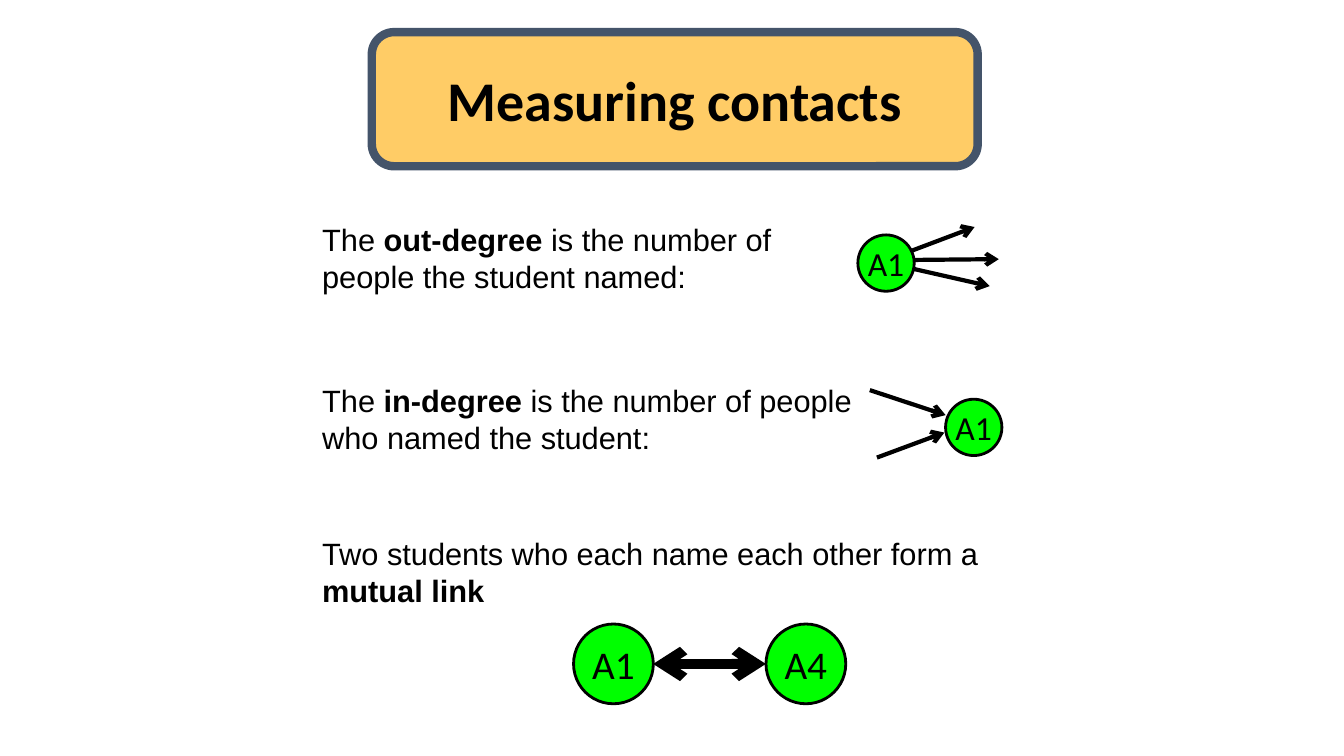
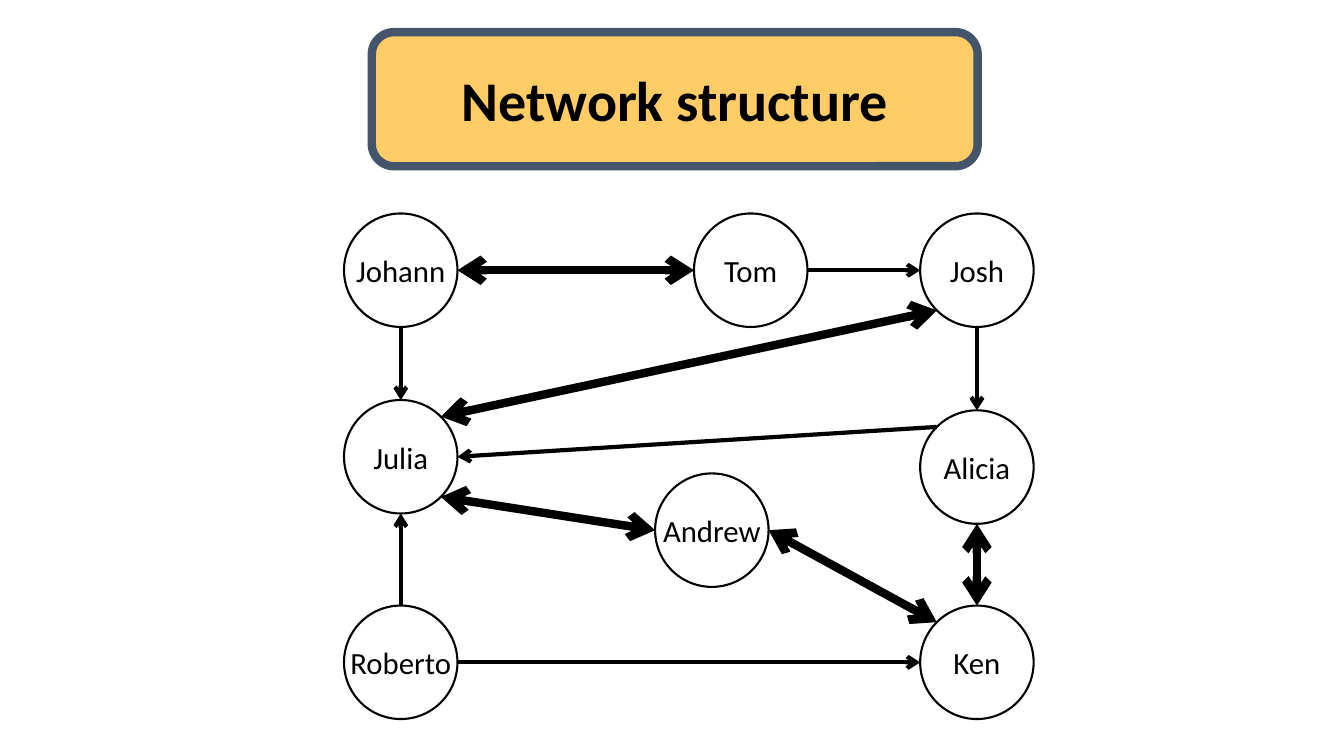
import math
from dataclasses import dataclass

from lxml import etree
from pptx import Presentation, util as u
from pptx.dml.color import RGBColor
from pptx.enum import shapes, text
from pptx.oxml.ns import qn


@dataclass(frozen=True)
class Theme:
    ink: RGBColor = RGBColor(0x00, 0x00, 0x00)
    paper: RGBColor = RGBColor(0xFF, 0xFF, 0xFF)
    banner: RGBColor = RGBColor(0xFF, 0xCC, 0x66)
    banner_edge: RGBColor = RGBColor(0x44, 0x54, 0x6A)
    student: RGBColor = RGBColor(0x00, 0xFF, 0x00)
    label_font: str = "Calibri"
    text_font: str = "Arial"
    title_size: int = 40
    pair_size: int = 28
    student_size: int = 24
    text_size: int = 22


theme = Theme()


def add_run(paragraph, words, size, font, bold=False):
    run = paragraph.add_run()
    run.text = words
    run.font.size = u.Pt(size)
    run.font.name = font
    run.font.bold = bold
    run.font.color.rgb = theme.ink


def add_arrow(slide, start, end, weight, mutual=False):
    arrow = slide.shapes.add_connector(
        shapes.MSO_CONNECTOR.STRAIGHT, *(u.Cm(length) for length in (*start, *end)))
    arrow.line.color.rgb = theme.ink
    arrow.line.width = u.Pt(weight)
    properties = arrow.element.spPr
    outline = properties.find(qn("a:ln"))
    for tip in ("a:headEnd", "a:tailEnd") if mutual else ("a:tailEnd",):
        etree.SubElement(outline, qn(tip), type="arrow")
    etree.SubElement(properties, qn("a:effectLst"))


prs = Presentation()
prs.slide_width, prs.slide_height = u.Cm(33.87), u.Cm(19.05)

# Slides with their title banners
titled = []
for heading in ("Measuring contacts", "Network structure"):
    slide = prs.slides.add_slide(prs.slide_layouts[5])
    place = [u.Cm(length) for length in (9.37, 0.81, 15.27, 3.38)]
    banner = slide.shapes.add_shape(shapes.MSO_SHAPE.ROUNDED_RECTANGLE, *place)
    banner.shadow.inherit = False
    banner.fill.solid()
    banner.fill.fore_color.rgb = theme.banner
    banner.line.color.rgb = theme.banner_edge
    banner.line.width = u.Pt(6)

    title = slide.shapes.title
    title.element.addprevious(banner.element)  # banner behind the title
    title.left, title.top, title.width, title.height = place
    frame = title.text_frame
    frame.auto_size = text.MSO_AUTO_SIZE.NONE
    frame.vertical_anchor = text.MSO_ANCHOR.MIDDLE
    frame.paragraphs[0].alignment = text.PP_ALIGN.CENTER
    add_run(frame.paragraphs[0], heading, theme.title_size, theme.label_font, True)
    titled.append(slide)
contacts, network = titled

# Definitions: top, width, runs (every second run is bold)
definitions = [
    (5.44, 13.74, ("The ", "out-degree", " is the number of people the student named:")),
    (9.5, 15.06, ("The ", "in-degree ", "is the number of people who named the student:")),
    (13.36, 19.05, ("Two students who each name each other form a ", "mutual link")),
]
for top, width, wording in definitions:
    definition = contacts.shapes.add_textbox(u.Cm(7.87), u.Cm(top), u.Cm(width), u.Cm(2.13))
    definition.text_frame.word_wrap = True
    for position, words in enumerate(wording):
        add_run(definition.text_frame.paragraphs[0], words,
                theme.text_size, theme.text_font, position % 2 == 1)

# Arrows that show out-degree, in-degree and the mutual link
for start, end in [
    ((22.89, 6.35), (24.56, 5.72)),
    ((23.04, 6.55), (25.17, 6.53)),
    ((23.04, 6.78), (24.94, 7.21)),
    ((21.92, 9.83), (23.83, 10.46)),
    ((22.1, 11.53), (23.8, 10.9)),
]:
    add_arrow(contacts, start, end, 3)
add_arrow(contacts, (19.3, 16.73), (16.46, 16.73), 7, mutual=True)

# Network members by centre
left, right = 10.1, 24.62
first_row, last_row = 6.81, 16.69
member_size = 2.86
members = {
    "Johann": (left, first_row),
    "Tom": (18.92, first_row),
    "Josh": (right, first_row),
    "Julia": (left, 11.51),
    "Alicia": (right, 11.77),
    "Andrew": (17.94, 13.36),
    "Roberto": (left, last_row),
    "Ken": (right, last_row),
}

# Circles of both slides: slide, name, centre, diameter, type size, fill, border
circles = [
    (contacts, "A1", (22.33, 6.63), 1.42, theme.student_size, theme.student, 2),
    (contacts, "A1", (24.54, 10.77), 1.42, theme.student_size, theme.student, 2),
    (contacts, "A1", (15.46, 16.73), 2.01, theme.pair_size, theme.student, 2),
    (contacts, "A4", (20.31, 16.73), 2.01, theme.pair_size, theme.student, 2),
]
circles += [(network, name, centre, member_size, theme.text_size, theme.paper, 1.5)
            for name, centre in members.items()]
for slide, name, (x, y), diameter, size, fill, border in circles:
    person = slide.shapes.add_shape(
        shapes.MSO_SHAPE.OVAL, u.Cm(x - diameter / 2), u.Cm(y - diameter / 2),
        u.Cm(diameter), u.Cm(diameter))
    person.shadow.inherit = False
    person.fill.solid()
    person.fill.fore_color.rgb = fill
    person.line.color.rgb = theme.ink
    person.line.width = u.Pt(border)
    frame = person.text_frame
    frame.margin_left = frame.margin_right = frame.margin_top = frame.margin_bottom = 0
    frame.word_wrap = False
    frame.vertical_anchor = text.MSO_ANCHOR.MIDDLE
    frame.paragraphs[0].alignment = text.PP_ALIGN.CENTER
    add_run(frame.paragraphs[0], name, size, theme.label_font)

# Network links run between compass points on the circles
compass = {point: math.radians(45 * step)
           for step, point in enumerate(("E", "SE", "S", "SW", "W", "NW", "N", "NE"))}
links = [
    ("Alicia", "NW", "Julia", "E", False),
    ("Johann", "S", "Julia", "N", False),
    ("Josh", "S", "Alicia", "N", False),
    ("Roberto", "N", "Julia", "S", False),
    ("Roberto", "E", "Ken", "W", False),
    ("Tom", "E", "Josh", "W", False),
    ("Tom", "W", "Johann", "E", True),
    ("Julia", "SE", "Andrew", "W", True),
    ("Julia", "NE", "Josh", "SW", True),
    ("Andrew", "E", "Ken", "NW", True),
    ("Ken", "N", "Alicia", "S", True),
]
for namer, exit_point, named, entry_point, mutual in links:
    start, end = [
        (members[name][0] + member_size / 2 * math.cos(compass[point]),
         members[name][1] + member_size / 2 * math.sin(compass[point]))
        for name, point in ((namer, exit_point), (named, entry_point))]
    add_arrow(network, start, end, 6 if mutual else 3, mutual)

prs.save("out.pptx")
